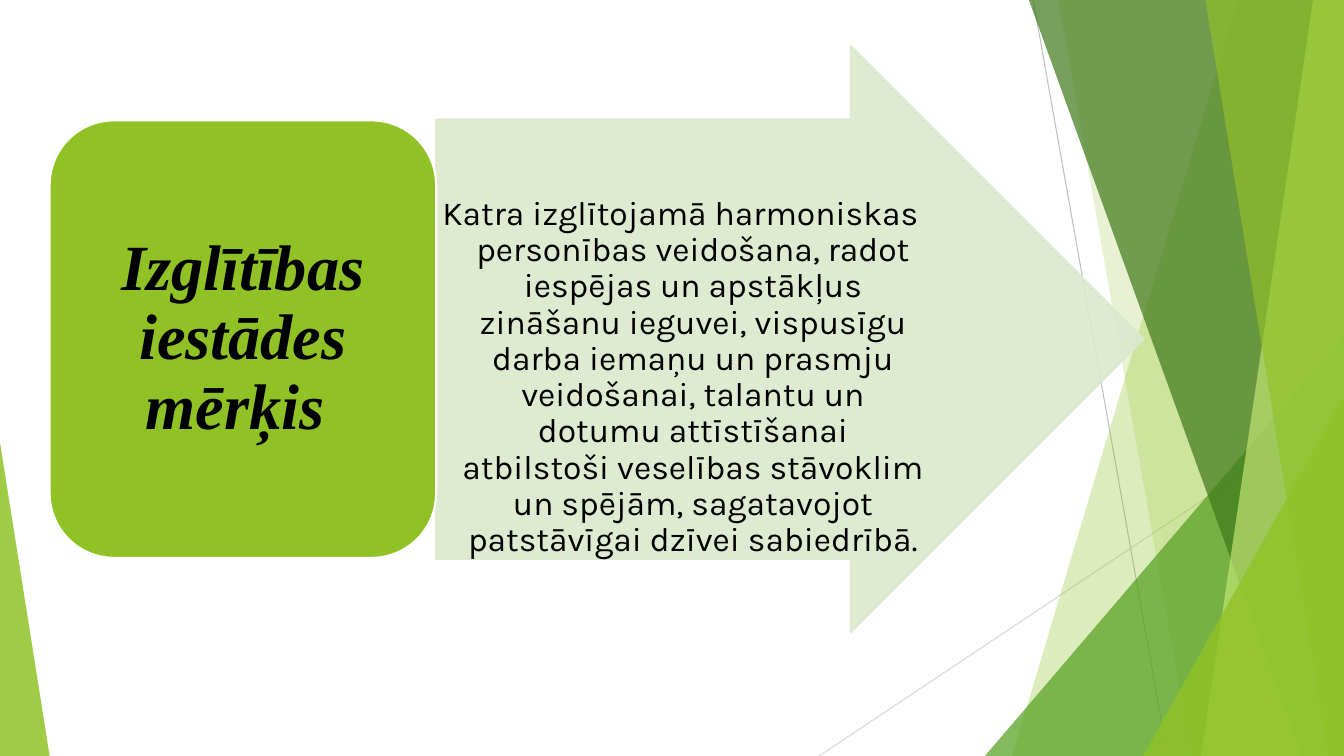
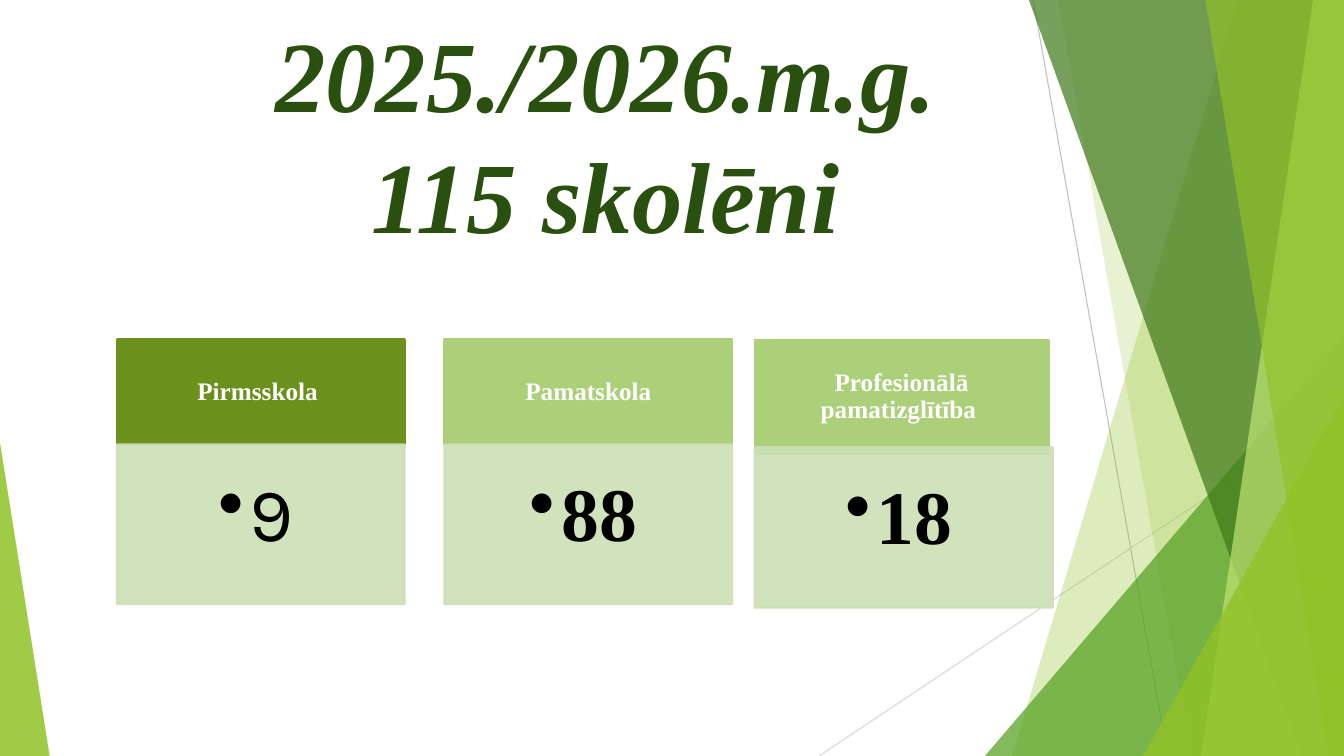
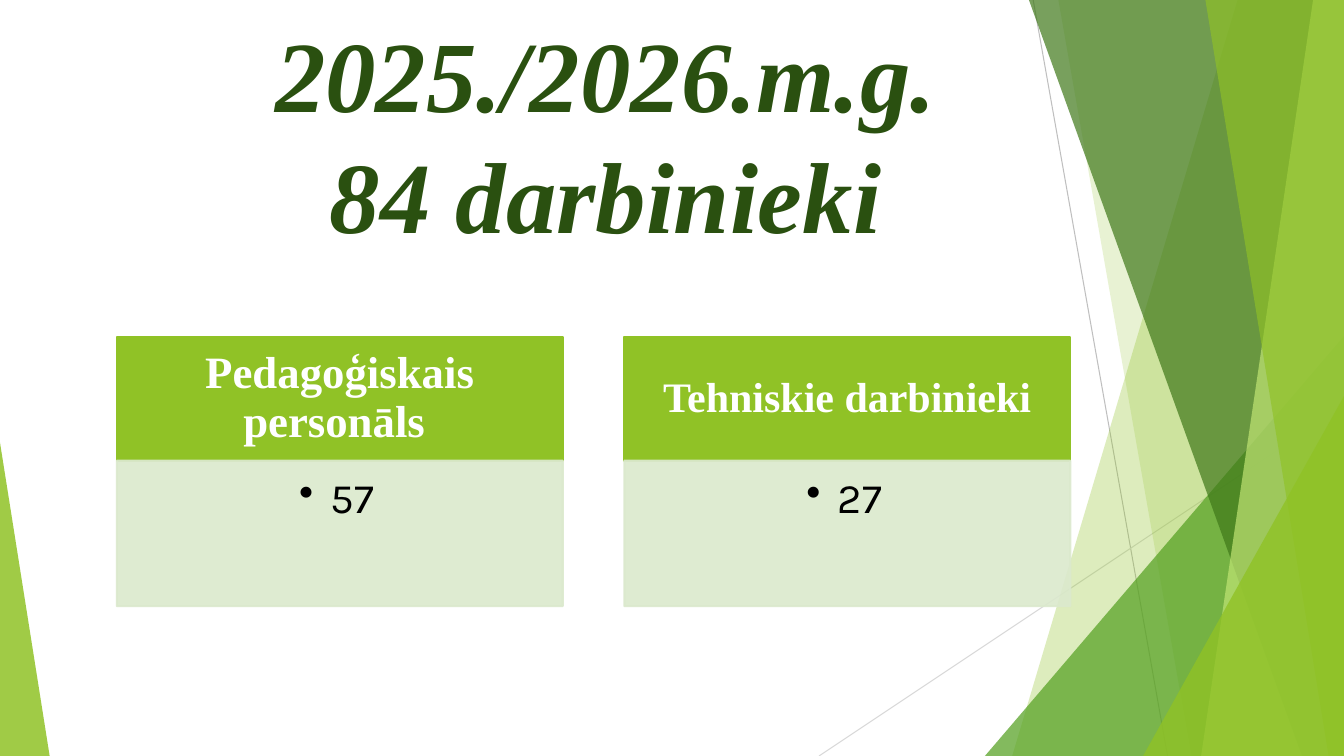
from lxml.etree import SubElement as Sub
from pptx import Presentation
from pptx.dml.color import RGBColor as Rgb
from pptx.enum.shapes import MSO_CONNECTOR as Conn, MSO_SHAPE as Kind
from pptx.enum.text import MSO_ANCHOR as Anchor, PP_ALIGN as Align
from pptx.oxml.ns import qn
from pptx.util import Pt

WIDE, HIGH = 960, 540
SERIF, SANS = "Times New Roman", "Karla"
HUES = {
    "lime": "90C226", "green": "54A021", "forest": "3F7819", "pale": "C0E474",
    "olive": "6B901C", "leaf": "ACD07A", "mint": "CCE0B5", "mist": "DBE9CD",
    "title": "2A5010", "gray": "BFBFBF", "silver": "D9D9D9",
    "black": "000000", "white": "FFFFFF",
}


def hue(name):
    return Rgb.from_string(HUES[name])


def paint(shape, fill, edge=None, alpha=100):
    """Fill and outline a shape; alpha is the opacity in percent."""
    shape.shadow.inherit = False
    shape.fill.solid()
    shape.fill.fore_color.rgb = hue(fill)
    if edge:
        shape.line.color.rgb = hue(edge)
        shape.line.width = Pt(1.5)
    else:
        shape.line.fill.background()
    if alpha < 100:
        for color in shape.element.spPr.iter(qn("a:srgbClr")):
            Sub(color, qn("a:alpha"), val=str(alpha * 1000))
    return shape


def form(slide, kind, box, fill, edge=None, alpha=100, adj=()):
    shape = slide.shapes.add_shape(kind, *map(Pt, box))
    for i, value in enumerate(adj):
        shape.adjustments[i] = value
    return paint(shape, fill, edge, alpha)


def write(shape, text, size, font=SERIF, color="black", bold=False, ital=False,
          pad=(0, 0, 0, 0), anchor=Anchor.TOP, space=0.9, hang=0, mark=None):
    """Set centred text; pad is left, top, right, bottom, hang the indent."""
    frame = shape.text_frame
    frame.word_wrap = True
    frame.vertical_anchor = anchor
    (frame.margin_left, frame.margin_top,
     frame.margin_right, frame.margin_bottom) = map(Pt, pad)
    para = frame.paragraphs[0]
    para.alignment = Align.CENTER
    para.line_spacing = space
    if hang:
        props = para._p.get_or_add_pPr()
        props.set("marL", str(Pt(hang)))
        props.set("indent", str(-Pt(hang)))
        if mark:
            Sub(props, qn("a:buChar"), char=mark)
    for i, line in enumerate(text.split("\n")):
        if i:
            para.add_line_break()
        run = para.add_run()
        run.text = line
        run.font.name, run.font.size = font, Pt(size)
        run.font.bold, run.font.italic = bold, ital
        run.font.color.rgb = hue(color)


def label(slide, box, text, size, **style):
    write(slide.shapes.add_textbox(*map(Pt, box)), text, size, **style)


def ray(slide, ends, color):
    line = slide.shapes.add_connector(Conn.STRAIGHT, *map(Pt, ends))
    line.line.color.rgb = hue(color)
    line.line.width = Pt(0.75)
    Sub(line.element.spPr, qn("a:effectLst"))


def shard(slide, top, foot, fill, alpha):
    """Draw a panel from a slanted left edge to the right side of the slide."""
    pen = slide.shapes.build_freeform(top, 0, scale=Pt(1))
    pen.add_line_segments([(WIDE, 0), (WIDE, HIGH), (foot, HIGH)])
    paint(pen.convert_to_shape(), fill, alpha=alpha)


def wedge(slide, left, top, width, tip, fill, alpha):
    """Draw a triangle that stands on the foot of the slide."""
    form(slide, Kind.ISOSCELES_TRIANGLE, (left, top, width, HIGH - top),
         fill, alpha=alpha, adj=[tip])


def decor(slide):
    ray(slide, (738, 0, 834, HIGH), "gray")
    ray(slide, (WIDE, 290, 585, HIGH), "silver")
    shard(slide, 884, 723, "lime", 30)
    shard(slide, 756, 851, "lime", 20)
    wedge(slide, 703.5, 240, 256.5, 1, "green", 72)
    shard(slide, 735, 930, "forest", 70)
    shard(slide, 938, 858, "pale", 70)
    shard(slide, 861, 949, "lime", 65)
    wedge(slide, 816.5, 283, 143.5, 1, "lime", 80)
    wedge(slide, 0, 316, 35.5, 0, "lime", 85)


def start(deck, title=None):
    slide = deck.slides.add_slide(deck.slide_layouts[6])
    decor(slide)
    if title:
        label(slide, (0, 5, 865, 90), title, 72, color="title", bold=True,
              ital=True, pad=(7.2, 3.6, 7.2, 3.6), space=1)
    return slide


def goal(slide, box, name, text):
    """Place a rounded name tile and, to its right, an arrow with text."""
    x, y, w, h = box
    tile = 276
    form(slide, Kind.RIGHT_ARROW, (x + tile, y, w - tile, h), "mist", "mist",
         90, [0.75, 0.5])
    label(slide, (x + tile, y + 106.5, 349, 280), text, 24, font=SANS,
          pad=(0.7, 0.7, 0.7, 0.7), hang=18)
    shape = form(slide, Kind.ROUNDED_RECTANGLE, (x, y + 53, tile, 312.5),
                 "lime", "white")
    write(shape, name, 46, bold=True, ital=True, pad=(13.5, 7.5, 13.5, 7.5),
          anchor=Anchor.MIDDLE)


def card(slide, box, head, name, value, fills, sizes, pads, font=SANS,
         lap=0, extra=0):
    """Stack a heading of height head on a value; lap and extra alter the value."""
    x, y, w, h = box
    top = form(slide, Kind.RECTANGLE, (x, y, w, head), fills[0], fills[0])
    write(top, name, sizes[0], color="white", bold=True, pad=pads[0] * 2,
          anchor=Anchor.MIDDLE)
    body = form(slide, Kind.RECTANGLE,
                (x, y + head - lap, w + extra, h - head + lap),
                fills[1], fills[1], 90)
    write(body, value, sizes[1], font=font, bold=font == SERIF, pad=pads[1],
          hang=22.5, mark="•")


def pupils(slide, x, y):
    look = {"sizes": (18, 54), "pads": ((10, 6), (23, 23, 30, 34))}
    card(slide, (x, y, 205.5, 189), 75, "Pirmsskola ", "9",
         fills=("olive", "mint"), **look)
    look.update(fills=("leaf", "mint"), font=SERIF)
    card(slide, (x + 234, y, 205.5, 189), 75, "Pamatskola", "88", **look)
    card(slide, (x + 455.5, y + 0.5, 210, 191), 81,
         "Profesionālā pamatizglītība ", "18", lap=4.5, extra=3, **look)


def staff(slide, x, y):
    rows = [("Pedagoģiskais personāls ", "57", 32, (18, 10)),
            ("Tehniskie darbinieki", "27", 30, (17, 9))]
    for i, (name, value, size, pad) in enumerate(rows):
        card(slide, (x + i * 362.5, y, 318.5, 192.5), 88.5, name, value,
             ("lime", "mist"), (size, 30), (pad, (12, 12, 16.5, 19)))


def main():
    deck = Presentation()
    deck.slide_width, deck.slide_height = Pt(WIDE), Pt(HIGH)
    goal(start(deck), (35.5, 33, 781.5, 418.5), "Izglītības iestādes mērķis ",
         "Katra izglītojamā harmoniskas personības veidošana, radot iespējas "
         "un apstākļus zināšanu ieguvei, vispusīgu darba iemaņu un prasmju "
         "veidošanai, talantu un dotumu attīstīšanai atbilstoši veselības "
         "stāvoklim un spējām, sagatavojot patstāvīgai dzīvei sabiedrībā.")
    pupils(start(deck, "2025./2026.m.g.\n115 skolēni"), 83.5, 242.5)
    staff(start(deck, "2025./2026.m.g.\n84 darbinieki"), 83.5, 240.5)
    deck.save("out.pptx")


if __name__ == "__main__":
    main()
